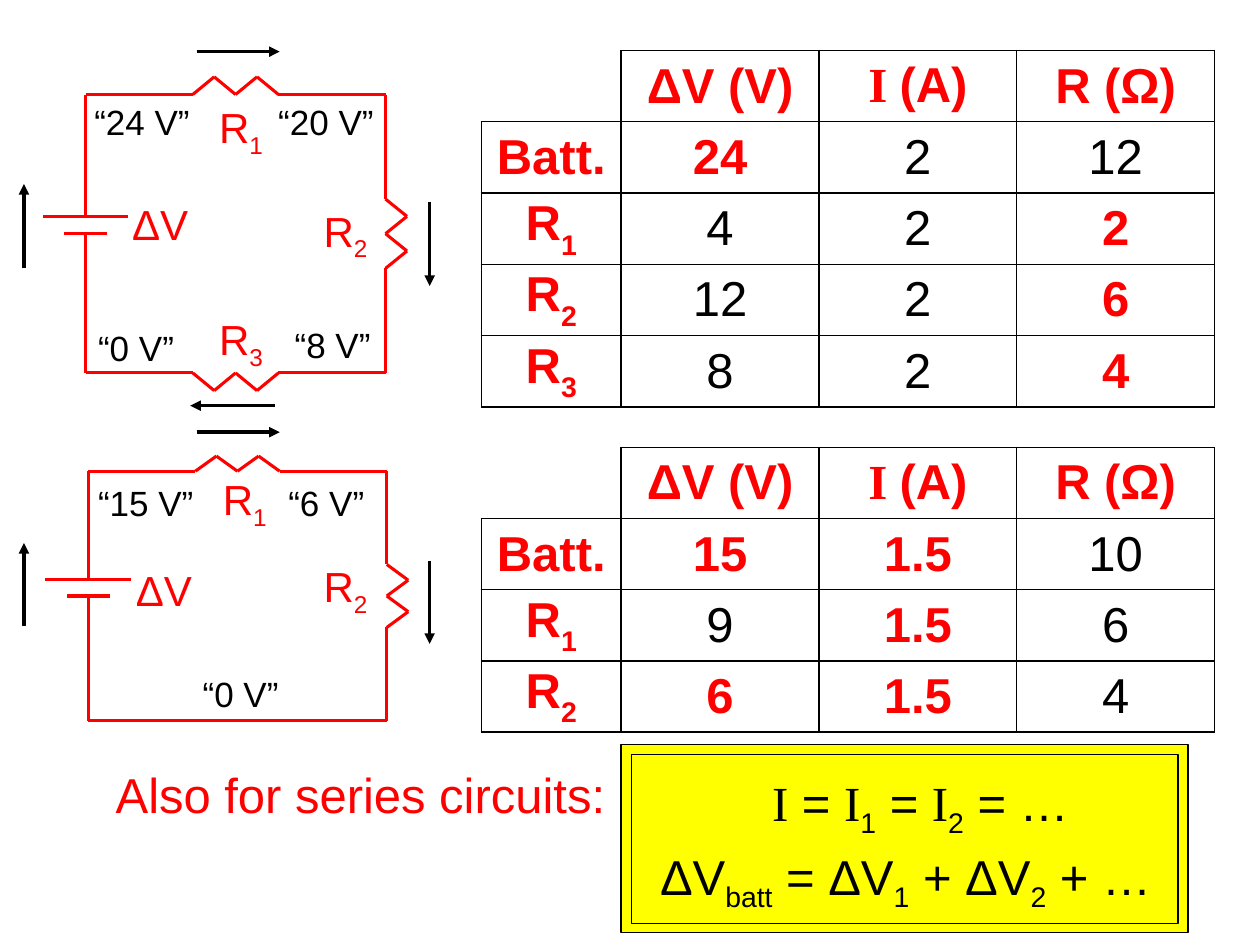
from itertools import pairwise
from lxml import etree
from pptx import Presentation
from pptx import util as u
from pptx.dml.color import RGBColor
from pptx.enum import shapes, text
from pptx.oxml import ns

RED = RGBColor(255, 0, 0)
BLACK = RGBColor(0, 0, 0)
YELLOW = RGBColor(255, 255, 0)

HEADER = ["", "ΔV (V)", "I |(A)", "R (Ω)"]
TABLES = [
    dict(top=0.4, bottom=3.23,
         rows=[HEADER, ["Batt.", "24", "2", "12"], ["R|_1", "4", "2", "2"],
               ["R|_2", "12", "2", "6"], ["R|_3", "8", "2", "4"]],
         solved={(1, 2), (1, 3), (2, 1), (2, 2), (3, 1), (3, 2), (4, 1), (4, 2)}),
    dict(top=3.55, bottom=5.81,
         rows=[HEADER, ["Batt.", "15", "1.5", "10"], ["R|_1", "9", "1.5", "6"],
               ["R|_2", "6", "1.5", "4"]],
         solved={(1, 3), (2, 1), (2, 3), (3, 3)}),
]
TABLE_LEFT = 3.82
COLUMNS = [1.11, 1.57, 1.57, 1.57]

CIRCUITS = [
    dict(left=0.68, right=3.06, top=0.75, bottom=2.96, across=(1.53, 2.21),
         down=(1.58, 2.13), plates=(1.72, 1.85), rise=0.14, third=True),
    dict(left=0.7, right=3.07, top=3.74, bottom=5.72, across=(1.55, 2.22),
         down=(4.48, 4.98), plates=(4.6, 4.73), rise=0.12, third=False),
]
BULGE = 0.17

CURRENTS = [
    ((1.56, 0.41), (2.22, 0.41)), ((2.18, 3.22), (1.51, 3.22)),
    ((3.41, 1.6), (3.41, 2.27)), ((0.19, 2.13), (0.19, 1.46)),
    ((1.56, 3.43), (2.22, 3.43)), ((3.41, 4.45), (3.41, 5.11)),
    ((0.19, 4.97), (0.19, 4.31)),
]

PARTS = [
    ("R|_1", 1.64, 0.76), ("R|_2", 2.47, 1.58), ("R|_3", 1.64, 2.44), ("ΔV", 0.95, 1.53),
    ("R|_1", 1.67, 3.71), ("R|_2", 2.47, 4.4), ("ΔV", 0.98, 4.43),
]
POTENTIALS = [
    ("“24 V”", 0.65, 0.75, 0.96), ("“20 V”", 2.11, 0.75, 0.96),
    ("“0 V”", 0.68, 2.54, 0.8), ("“8 V”", 2.24, 2.52, 0.8),
    ("“15 V”", 0.68, 3.77, 0.96), ("“6 V”", 2.19, 3.77, 0.8),
    ("“0 V”", 1.51, 5.29, 0.8),
]
FORMULAS = [
    ("I| = |I|_1| = |I|_2| = …", 6.03, 6.08, 2.6),
    ("ΔV|_batt| = ΔV|_1| + ΔV|_2| + …", 5.14, 6.67, 4.14),
]
PANELS = [(4.93, 5.91, 4.5, 1.49), (5.01, 5.99, 4.34, 1.34)]


def write(frame, words, size=28, color=BLACK, bold=False, align=text.PP_ALIGN.LEFT, drop=-25):
    para = frame.paragraphs[0]
    para.alignment = align
    for piece in words.split("|"):
        span = para.add_run()
        span.text = piece.removeprefix("_")
        font = span.font
        font.name = "Times New Roman" if piece.strip() == "I" else "Arial"
        font.size, font.bold, font.color.rgb = u.Pt(size), bold, color
        if piece.startswith("_"):
            font._element.set("baseline", str(drop * 1000))


def label(page, words, left, top, width, height, wrap=False, **style):
    box = page.shapes.add_textbox(*map(u.Inches, (left, top, width, height)))
    box.text_frame.word_wrap = wrap
    write(box.text_frame, words, **style)


def draw_line(page, start, end, color, weight, arrow=False):
    line = page.shapes.add_connector(shapes.MSO_CONNECTOR.STRAIGHT,
                                     *map(u.Inches, (*start, *end)))
    line.line.color.rgb, line.line.width = color, u.Pt(weight)
    if arrow:
        etree.SubElement(line.line._get_or_add_ln(), ns.qn("a:tailEnd"), type="triangle")
    etree.SubElement(line._element.spPr, ns.qn("a:effectLst"))


def zigzag(start, end, shift):
    points = []
    for step in range(5):
        odd = step % 2
        points.append(tuple(a + (b - a) * step / 4 + s * odd
                            for a, b, s in zip(start, end, shift)))
    return points


def draw_circuit(page, left, right, top, bottom, across, down, plates, rise, third):
    near, far = across
    wire = [(left, plates[0]), (left, top)]
    wire += zigzag((near, top), (far, top), (0, -rise))
    wire += [(right, top)]
    wire += zigzag((right, down[0]), (right, down[1]), (BULGE, 0))
    wire += [(right, bottom)]
    if third:
        wire += zigzag((far, bottom), (near, bottom), (0, rise))
    wire += [(left, bottom), (left, plates[1])]
    for start, end in pairwise(wire):
        draw_line(page, start, end, RED, 1.75)
    for height, half in zip(plates, (0.34, 0.17)):
        draw_line(page, (left - half, height), (left + half, height), RED, 1.75)


def set_borders(cell, visible):
    for side in "LRTB":
        edge = etree.SubElement(cell._tc.get_or_add_tcPr(), ns.qn("a:ln" + side), w="12700")
        if side in visible:
            fill = etree.SubElement(edge, ns.qn("a:solidFill"))
            etree.SubElement(fill, ns.qn("a:srgbClr"), val=str(BLACK))
        else:
            etree.SubElement(edge, ns.qn("a:noFill"))


def draw_table(page, top, bottom, rows, solved):
    frame = page.shapes.add_table(len(rows), len(COLUMNS), *map(
        u.Inches, (TABLE_LEFT, top, sum(COLUMNS), bottom - top)))
    table = frame.table
    table.first_row = table.horz_banding = False
    for column, width in zip(table.columns, COLUMNS):
        column.width = u.Inches(width)
    for r, row in enumerate(rows):
        table.rows[r].height = u.Inches((bottom - top) / len(rows))
        for c, words in enumerate(row):
            cell = table.cell(r, c)
            cell.margin_left = cell.margin_right = cell.margin_top = cell.margin_bottom = 0
            cell.vertical_anchor = text.MSO_ANCHOR.MIDDLE
            set_borders(cell, "LRTB" if words else "RB")
            cell.fill.background()
            given = (r, c) not in solved
            write(cell.text_frame, words, color=RED if given else BLACK, bold=given,
                  align=text.PP_ALIGN.CENTER, drop=-30)


def main():
    deck = Presentation()
    deck.slide_width, deck.slide_height = u.Inches(10), u.Inches(7.5)
    page = deck.slides.add_slide(deck.slide_layouts[6])
    for place in PANELS:
        panel = page.shapes.add_shape(shapes.MSO_SHAPE.RECTANGLE, *map(u.Inches, place))
        panel.shadow.inherit = False
        panel.fill.solid()
        panel.fill.fore_color.rgb = YELLOW
        panel.line.color.rgb, panel.line.width = BLACK, u.Pt(0.75)
    for circuit in CIRCUITS:
        draw_circuit(page, **circuit)
    for table in TABLES:
        draw_table(page, **table)
    for start, end in CURRENTS:
        draw_line(page, start, end, BLACK, 2, arrow=True)
    for words, left, top in PARTS:
        label(page, words, left, top, 0.85, 0.55, wrap=True, size=24, color=RED)
    for words, left, top, width in POTENTIALS:
        label(page, words, left, top, width, 0.43, size=20)
    for words, left, top, width in FORMULAS:
        label(page, words, left, top, width, 0.57)
    label(page, "Also for series circuits:", 0.82, 6.02, 4.2, 0.57, color=RED)
    deck.save("out.pptx")


if __name__ == "__main__":
    main()
